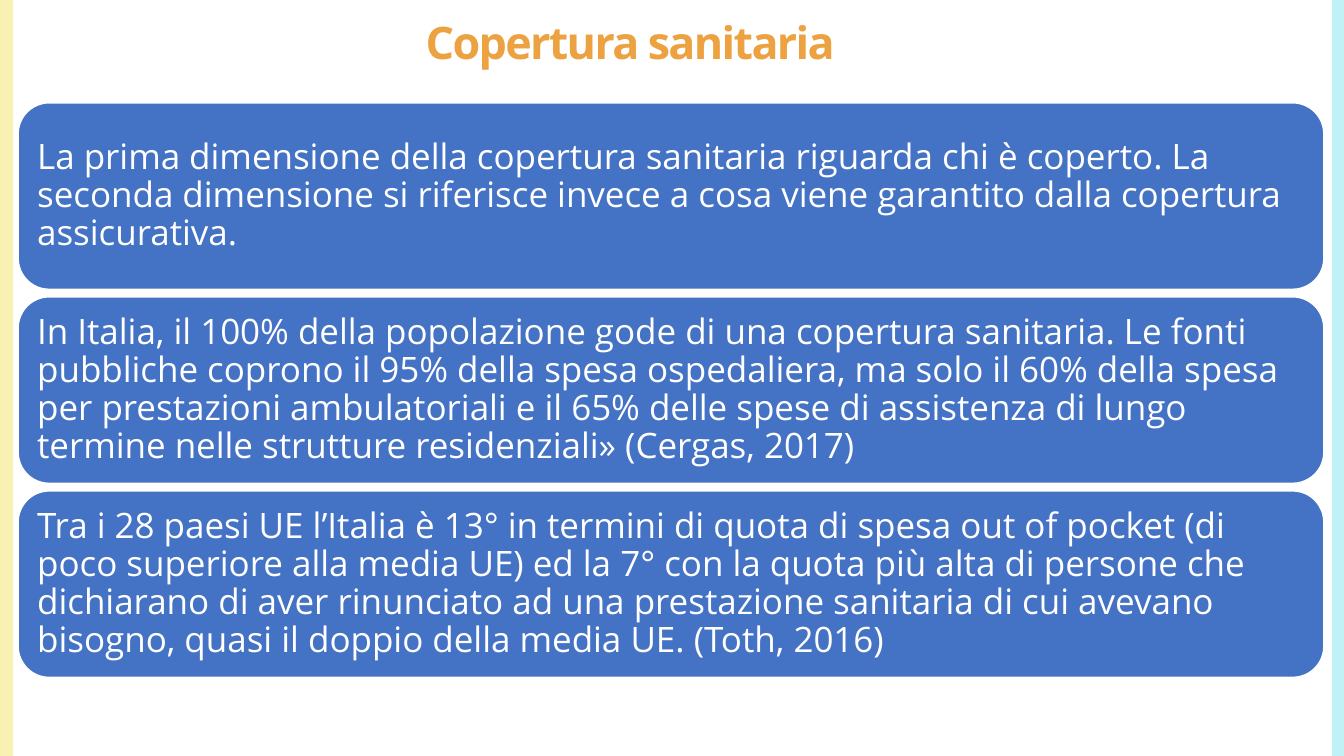
"""Build the slide on health coverage in Italy."""
from pptx import Presentation
from pptx.dml.color import RGBColor
from pptx.enum.shapes import MSO_SHAPE
from pptx.enum.text import MSO_ANCHOR, MSO_AUTO_SIZE, PP_ALIGN
from pptx.util import Inches, Pt

RECTANGLE = MSO_SHAPE.RECTANGLE
ROUNDED = MSO_SHAPE.ROUNDED_RECTANGLE
MIDDLE = MSO_ANCHOR.MIDDLE
NO_FIT = MSO_AUTO_SIZE.NONE
LEFT, CENTER = PP_ALIGN.LEFT, PP_ALIGN.CENTER

FONT = "Open Sans"
COLORS = {
    "yellow": "F7F2B1",
    "aqua": "C0F1F4",
    "orange": "EDA242",
    "blue": "4472C4",
    "white": "FFFFFF",
}
TITLE_FORMAT = {"name": FONT, "size": Pt(32), "bold": True}
CARD_FORMAT = {"name": FONT, "size": Pt(25), "bold": False}

STATEMENTS = [
    "La prima dimensione della copertura sanitaria riguarda chi è coperto. "
    "La seconda dimensione si riferisce invece a cosa viene garantito dalla "
    "copertura assicurativa.",
    "In Italia, il 100% della popolazione gode di una copertura sanitaria. "
    "Le fonti pubbliche coprono il 95% della spesa ospedaliera, ma solo il 60% "
    "della spesa per prestazioni ambulatoriali e il 65% delle spese di "
    "assistenza di lungo termine nelle strutture residenziali» (Cergas, 2017)",
    "Tra i 28 paesi UE l’Italia è 13° in termini di quota di spesa out of "
    "pocket (di poco superiore alla media UE) ed la 7° con la quota più alta di "
    "persone che dichiarano di aver rinunciato ad una prestazione sanitaria di "
    "cui avevano bisogno, quasi il doppio della media UE. (Toth, 2016)",
]
CARD_TOP, CARD_HEIGHT, CARD_PITCH = 1.02, 1.85, 1.925


def rgb(color):
    """Return the named colour."""
    return RGBColor.from_string(COLORS[color])


def write_text(frame, text, font_format, color, align):
    """Write one formatted, vertically centred paragraph and return its run."""
    frame.word_wrap = True
    frame.auto_size = NO_FIT
    frame.vertical_anchor = MIDDLE
    paragraph = frame.paragraphs[0]
    paragraph.alignment = align
    paragraph.line_spacing = 0.9
    run = paragraph.add_run()
    run.text = text
    for attribute, value in font_format.items():
        setattr(run.font, attribute, value)
    run.font.color.rgb = rgb(color)
    return run


def add_block(slide, preset, box, color):
    """Add a filled shape without line or shadow."""
    block = slide.shapes.add_shape(preset, *map(Inches, box))
    block.shadow.inherit = False
    block.fill.solid()
    block.fill.fore_color.rgb = rgb(color)
    block.line.fill.background()
    return block


def add_card(slide, top, statement):
    """Add a rounded card holding one statement."""
    card = add_block(slide, ROUNDED, (0.18, top, 12.95, CARD_HEIGHT), "blue")
    card.line.color.rgb = rgb("white")
    card.line.width = Pt(1)
    frame = card.text_frame
    for side in ("left", "right", "top", "bottom"):
        setattr(frame, f"margin_{side}", Inches(0.1))
    write_text(frame, statement, CARD_FORMAT, "white", LEFT)


def place_title(slide, text):
    """Move the title placeholder and write the heading in it."""
    title = slide.shapes.title
    title.left, title.top = Inches(0.35), Inches(0.06)
    title.width, title.height = Inches(11.8), Inches(0.77)
    run = write_text(title.text_frame, text, TITLE_FORMAT, "orange", CENTER)
    run.font._element.set("spc", "-120")


def main():
    """Build and save the slide."""
    deck = Presentation()
    deck.slide_width, deck.slide_height = Inches(13.33), Inches(7.5)
    slide = deck.slides.add_slide(deck.slide_layouts[5])
    add_block(slide, RECTANGLE, (0, 0, 0.13, 7.5), "yellow")
    add_block(slide, RECTANGLE, (13.21, 0, 0.12, 7.5), "aqua")
    place_title(slide, "Copertura sanitaria")
    for index, statement in enumerate(STATEMENTS):
        add_card(slide, CARD_TOP + index * CARD_PITCH, statement)
    deck.save("out.pptx")


if __name__ == "__main__":
    main()
